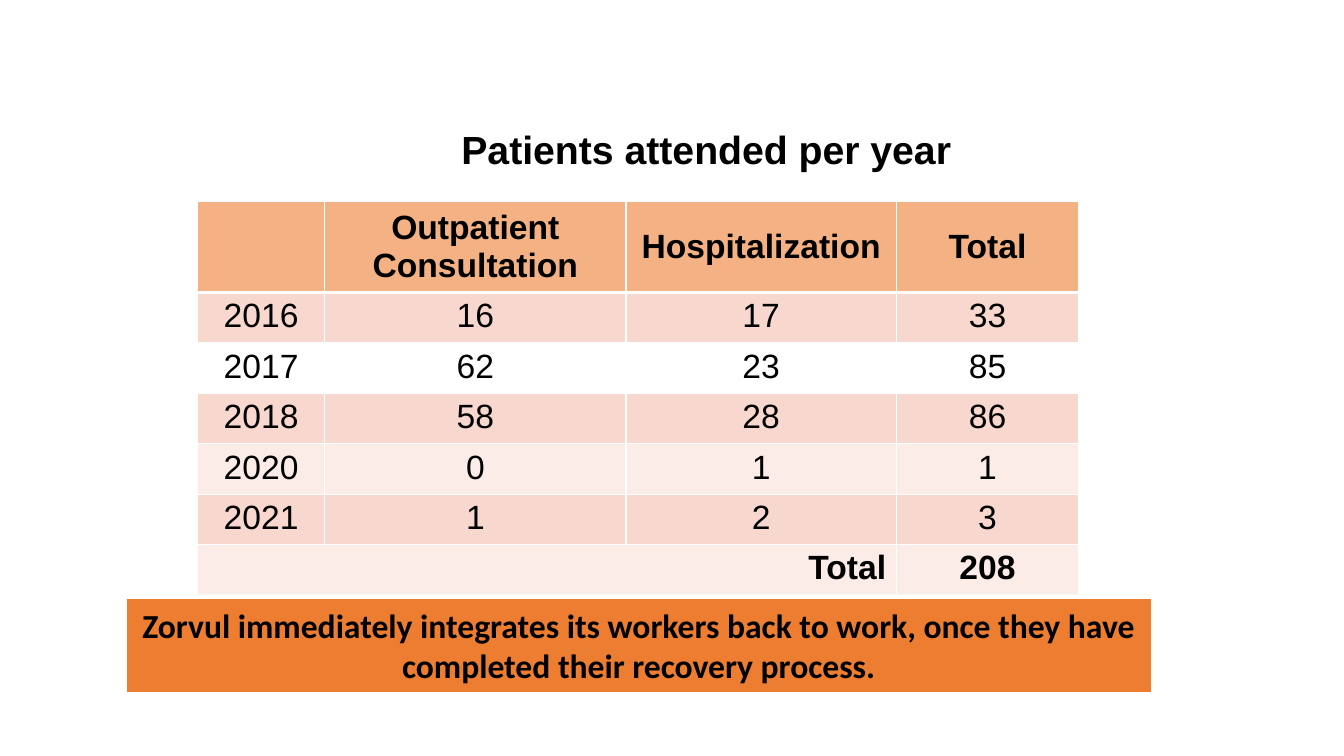
from lxml.etree import SubElement
from pptx import Presentation
from pptx.dml.color import RGBColor
from pptx.enum.shapes import MSO_SHAPE
from pptx.enum.text import MSO_ANCHOR, PP_ALIGN
from pptx.oxml.ns import qn
from pptx.util import Inches, Pt


def color(hex_code):
    return RGBColor.from_string(hex_code)


def write(frame, text, size=24, font="Arial", bold=False,
          align=PP_ALIGN.CENTER, anchor=MSO_ANCHOR.TOP, spacing=None):
    frame.word_wrap = True
    frame.vertical_anchor = anchor
    paragraph = frame.paragraphs[0]
    paragraph.alignment = align
    paragraph.line_spacing = spacing
    run = paragraph.add_run()
    run.text = text
    run.font.size = Pt(size)
    run.font.name = font
    run.font.bold = bold
    run.font.color.rgb = color("000000")


deck = Presentation()
deck.slide_width, deck.slide_height = Inches(13.33), Inches(7.5)
slide = deck.slides.add_slide(deck.slide_layouts[6])

# Heading
heading = slide.shapes.add_textbox(Inches(3.14), Inches(1.09), Inches(6.39), Inches(0.83))
write(heading.text_frame, "Patients attended per year", size=28, bold=True,
      align=PP_ALIGN.RIGHT, anchor=MSO_ANCHOR.MIDDLE, spacing=0.9)

# Patients table: texts and row fills
patients = [
    ("F4B183", ["", "Outpatient Consultation", "Hospitalization", "Total"]),
    ("F8D7CE", ["2016", "16", "17", "33"]),
    ("FFFFFF", ["2017", "62", "23", "85"]),
    ("F8D7CE", ["2018", "58", "28", "86"]),
    ("FCECE8", ["2020", "0", "1", "1"]),
    ("F8D7CE", ["2021", "1", "2", "3"]),
    ("FCECE8", ["Total", "", "", "208"]),
]
column_widths = [1.26, 2.99, 2.68, 1.81]
header_height, row_height = 0.84, 0.47
last = len(patients) - 1
table = slide.shapes.add_table(
    len(patients), len(column_widths), Inches(1.96), Inches(2),
    Inches(sum(column_widths)), Inches(header_height + last * row_height)).table
for column, width in zip(table.columns, column_widths):
    column.width = Inches(width)

for r, (fill, texts) in enumerate(patients):
    table.rows[r].height = Inches(row_height if r else header_height)
    for c, text in enumerate(texts):
        cell = table.cell(r, c)
        # White rules, thicker under the header
        for side in "LRTB":
            thick = (r, side) in [(0, "B"), (1, "T")]
            rule = SubElement(cell._tc.get_or_add_tcPr(), qn(f"a:ln{side}"),
                              w=str(Pt(3 if thick else 1)))
            SubElement(SubElement(rule, qn("a:solidFill")), qn("a:srgbClr"), val="FFFFFF")
        cell.fill.solid()
        cell.fill.fore_color.rgb = color(fill)
        cell.vertical_anchor = MSO_ANCHOR.TOP if r else MSO_ANCHOR.MIDDLE
        if text:
            sum_label = r == last and c == 0
            write(cell.text_frame, text, bold=r in (0, last), anchor=None,
                  align=PP_ALIGN.RIGHT if sum_label else PP_ALIGN.CENTER)
table.cell(last, 0).merge(table.cell(last, 2))

# Closing message
message = slide.shapes.add_shape(
    MSO_SHAPE.RECTANGLE, Inches(1.26), Inches(5.95), Inches(10.15), Inches(0.91))
message.shadow.inherit = False
message.fill.solid()
message.fill.fore_color.rgb = color("ED7D31")
message.line.color.rgb = color("ED7D31")
message.line.width = Pt(0.5)
write(message.text_frame,
      "Zorvul immediately integrates its workers back to work, once they have "
      "completed their recovery process.", font="Calibri", bold=True)

deck.save("out.pptx")
